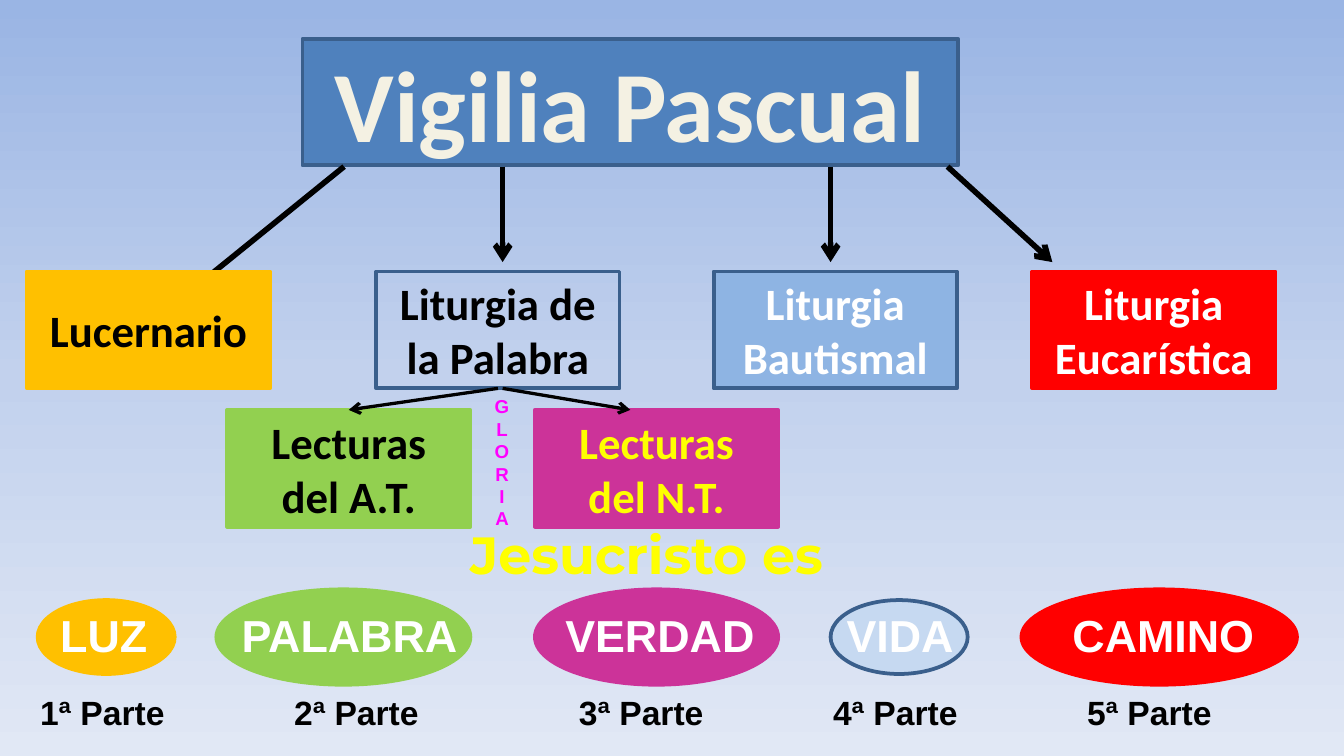
from copy import deepcopy

from lxml import etree
from pptx import Presentation
from pptx import util as u
from pptx.dml.color import RGBColor
from pptx.enum import shapes, text
from pptx.oxml.ns import qn

BLACK = RGBColor(0, 0, 0)
WHITE = RGBColor(255, 255, 255)
CREAM = RGBColor(0xF4, 0xF1, 0xE3)
YELLOW = RGBColor(255, 255, 0)
MAGENTA = RGBColor(255, 0, 255)
GOLD = RGBColor(0xFF, 0xC0, 0)
GREEN = RGBColor(0x92, 0xD0, 0x50)
PURPLE = RGBColor(0xCC, 0x33, 0x99)
RED = RGBColor(255, 0, 0)
BLUE = RGBColor(0x4F, 0x81, 0xBD)
LIGHT_BLUE = RGBColor(0x8E, 0xB4, 0xE3)
PALE_BLUE = RGBColor(0xC6, 0xD9, 0xF1)
EDGE_BLUE = RGBColor(0x3A, 0x5F, 0x8C)
OUTLINE_BLUE = "054697"
BACKGROUND = [(0, RGBColor(0x9A, 0xB5, 0xE4)), (0.5, RGBColor(0xC2, 0xD1, 0xED)),
              (1, RGBColor(0xE1, 0xE8, 0xF5))]

SLIDE_WIDTH = 10
SLIDE_HEIGHT = SLIDE_WIDTH * 9 / 16
BOX_WIDTH, BOX_HEIGHT = 1.81, 0.87
LITURGY_TOP, READING_TOP = 2.02, 3.05
TITLE_BOX = (2.25, 0.29, 4.88, 0.94)
OVAL_MIDDLE, WORD_TOP, PART_TOP = 4.74, 4.47, 5.1

# text, left, top, fill, line, font colour
BOXES = [
    ("Lucernario", 0.2, LITURGY_TOP, GOLD, GOLD, BLACK),
    ("Liturgia de la Palabra", 2.8, LITURGY_TOP, None, EDGE_BLUE, BLACK),
    ("Liturgia Bautismal", 5.31, LITURGY_TOP, LIGHT_BLUE, EDGE_BLUE, WHITE),
    ("Liturgia Eucarística", 7.68, LITURGY_TOP, RED, RED, WHITE),
    ("Lecturas del A.T.", 1.69, READING_TOP, GREEN, GREEN, BLACK),
    ("Lecturas del N.T.", 3.98, READING_TOP, PURPLE, PURPLE, YELLOW),
]
TITLE_ARROWS = [((2.56, 1.24), (1.3, 2.26)), ((3.74, 1.24), (3.74, 1.95)),
                ((6.18, 1.24), (6.18, 1.95)), ((7.05, 1.24), (7.83, 1.95))]
# left, width, height, fill, line
OVALS = [(1.61, 1.89, 0.71, GREEN, GREEN), (3.98, 1.81, 0.71, PURPLE, PURPLE),
         (7.6, 2.05, 0.71, RED, RED), (6.18, 1.02, 0.55, PALE_BLUE, EDGE_BLUE),
         (0.28, 1.02, 0.55, GOLD, GOLD)]
# text, left, width, centred, wrapped
WORDS = [("LUZ", 0.35, 0.86, False, False), ("PALABRA", 1.69, 1.82, True, False),
         ("VERDAD", 3.98, 1.86, True, True), ("VIDA", 6.2, 1.01, False, False),
         ("CAMINO", 7.83, 1.65, True, True)]
PART_LEFTS = [0.2, 2.09, 4.21, 6.1, 7.99]

presentation = Presentation()
presentation.slide_width = u.Inches(SLIDE_WIDTH)
presentation.slide_height = u.Inches(SLIDE_HEIGHT)
slide = presentation.slides.add_slide(presentation.slide_layouts[6])


def paint_background():
    fill = slide.background.fill
    fill.gradient()
    fill.gradient_angle = 270
    stop_list = slide.element.find(".//" + qn("a:gsLst"))
    stop_list.append(deepcopy(stop_list[0]))
    for stop, (position, color) in zip(fill.gradient_stops, BACKGROUND):
        stop.color.rgb = color
        stop.position = position


def write(shape, content, size, color, font="Arial", centred=True, wrap=True,
          anchor=text.MSO_ANCHOR.TOP, outline=None):
    frame = shape.text_frame
    frame.word_wrap = wrap
    frame.vertical_anchor = anchor
    frame.text = content
    for paragraph in frame.paragraphs:
        paragraph.alignment = text.PP_ALIGN.CENTER if centred else text.PP_ALIGN.LEFT
        run = paragraph.runs[0]
        run.font.name, run.font.size, run.font.bold = font, u.Pt(size), True
        run.font.color.rgb = color
        if outline:
            line = etree.Element(qn("a:ln"), w=str(u.Pt(1)))
            solid = etree.SubElement(line, qn("a:solidFill"))
            etree.SubElement(solid, qn("a:srgbClr"), val=outline)
            run.font._element.insert(0, line)


def add_label(content, left, top, width, height, size, color, **style):
    box = slide.shapes.add_textbox(*map(u.Inches, (left, top, width, height)))
    write(box, content, size, color, **style)
    box.text_frame.auto_size = text.MSO_AUTO_SIZE.SHAPE_TO_FIT_TEXT


def add_figure(kind, left, top, width, height, fill, line):
    shape = slide.shapes.add_shape(kind, *map(u.Inches, (left, top, width, height)))
    shape.shadow.inherit = False
    if fill is None:
        shape.fill.background()
    else:
        shape.fill.solid()
        shape.fill.fore_color.rgb = fill
    shape.line.color.rgb = line
    shape.line.width = u.Pt(2)
    return shape


def add_arrow(start, end, width):
    arrow = slide.shapes.add_connector(shapes.MSO_CONNECTOR.STRAIGHT,
                                       *map(u.Inches, start + end))
    arrow.line.color.rgb = BLACK
    arrow.line.width = u.Pt(width)
    properties = arrow._element.spPr
    etree.SubElement(properties.find(qn("a:ln")), qn("a:tailEnd"), type="arrow")
    etree.SubElement(properties, qn("a:effectLst"))
    return arrow


paint_background()
RECTANGLE, OVAL = shapes.MSO_SHAPE.RECTANGLE, shapes.MSO_SHAPE.OVAL
MIDDLE = text.MSO_ANCHOR.MIDDLE

for left, width, height, fill, line in OVALS:
    add_figure(OVAL, left, OVAL_MIDDLE - height / 2, width, height, fill, line)

title = add_figure(RECTANGLE, *TITLE_BOX, BLUE, EDGE_BLUE)
write(title, "Vigilia Pascual", 54, CREAM, font="Calibri", anchor=MIDDLE,
      outline=OUTLINE_BLUE)
for start, end in TITLE_ARROWS:
    add_arrow(start, end, 3)

boxes = {}
for name, left, top, fill, line, color in BOXES:
    boxes[name] = add_figure(RECTANGLE, left, top, BOX_WIDTH, BOX_HEIGHT, fill, line)
    write(boxes[name], name, 24, color, font="Calibri", anchor=MIDDLE)

old_testament = add_arrow((3.7, 2.89), (2.6, READING_TOP), 1.75)
old_testament.begin_connect(boxes["Liturgia de la Palabra"], 2)
old_testament.end_connect(boxes["Lecturas del A.T."], 0)
add_arrow((3.74, 2.89), (4.69, READING_TOP), 1.75)

add_label("\n".join("GLORIA"), 3.58, 2.89, 0.31, 1.11, 10, MAGENTA)
for word, left, width, centred, wrap in WORDS:
    add_label(word, left, WORD_TOP, width, 0.5, 24, WHITE, centred=centred, wrap=wrap)
for number, left in enumerate(PART_LEFTS, 1):
    add_label(f"{number}ª Parte", left, PART_TOP, 1.14, 0.4, 18, BLACK,
              centred=False, wrap=False)
add_label("Jesucristo es ", 3.27, 3.84, 3.19, 0.57, 28, YELLOW, font="Montserrat",
          outline=OUTLINE_BLUE)

presentation.save("out.pptx")
